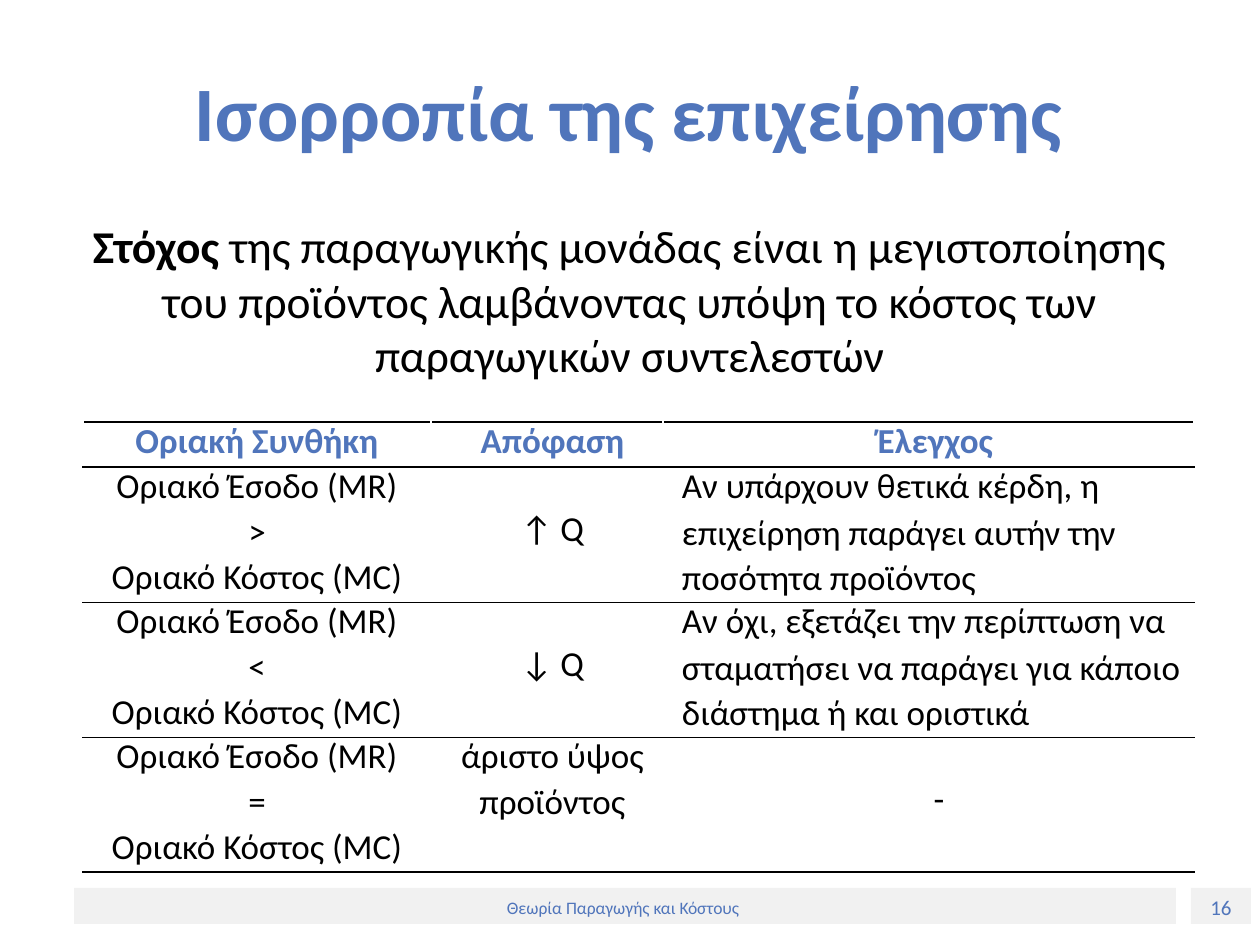
from lxml import etree
from pptx import Presentation
from pptx.dml.color import RGBColor
from pptx.enum.shapes import MSO_SHAPE
from pptx.enum.text import MSO_ANCHOR, PP_ALIGN
from pptx.oxml.ns import qn
from pptx.util import Emu, Pt

RECT = MSO_SHAPE.RECTANGLE
LEFT, CENTER = PP_ALIGN.LEFT, PP_ALIGN.CENTER
TOP, MIDDLE = MSO_ANCHOR.TOP, MSO_ANCHOR.MIDDLE
BLUE = RGBColor(0x50, 0x75, 0xBB)
BLACK = RGBColor(0x00, 0x00, 0x00)
GREY = RGBColor(0xF1, 0xF1, 0xF1)
FONT = "Calibri"
PX_PER_INCH = 126

HEADERS = [("Οριακή Συνθήκη", 0), ("Απόφαση", 11), ("Έλεγχος", 14)]
ROWS = [
    (">", ["↑ Q"], ["Αν υπάρχουν θετικά κέρδη, η",
                    "επιχείρηση παράγει αυτήν την ποσότητα προϊόντος"]),
    ("<", ["↓ Q"], ["Αν όχι, εξετάζει την περίπτωση να",
                    "σταματήσει να παράγει για κάποιο διάστημα ή και οριστικά"]),
    ("=", ["άριστο ύψος", "προϊόντος"], ["-"]),
]


def px(n):
    return Emu(round(n * 914400 / PX_PER_INCH))


def style(p, size, color, bold=False, align=LEFT):
    p.alignment = align
    for r in p.runs:
        r.font.name = FONT
        r.font.size = Pt(size)
        r.font.bold = bold
        r.font.color.rgb = color


def add_text(slide, box, text, size, color, bold=False, align=LEFT, left=0, top=0):
    tf = slide.shapes.add_textbox(*map(px, box)).text_frame
    tf.word_wrap = True
    tf.margin_left, tf.margin_top = px(left), px(top)
    tf.margin_right = tf.margin_bottom = 0
    tf.text = text
    p = tf.paragraphs[0]
    style(p, size, color, bold, align)
    return p


def add_bar(slide, box):
    sp = slide.shapes.add_shape(RECT, *map(px, box))
    sp.shadow.inherit = False
    sp.fill.solid()
    sp.fill.fore_color.rgb = GREY
    sp.line.fill.background()


def add_goal(slide, box):
    p = add_text(slide, box, "Στόχος ", 26, BLACK, align=CENTER, top=1)
    p.add_run().text = ("της παραγωγικής μονάδας είναι η μεγιστοποίησης του προϊόντος "
                        "λαμβάνοντας υπόψη το κόστος των παραγωγικών συντελεστών")
    style(p, 26, BLACK, align=CENTER)
    p.runs[0].font.bold = True
    p.space_before = Pt(1.1)


def add_footer(slide, box, text, number):
    """Grey footer bar, with the slide number in its own box at the right."""
    x, y, w, h = box
    num_w, gap = 60, 15
    bar_w = w - num_w - gap
    num_x = x + bar_w + gap
    add_bar(slide, (x, y, bar_w, h))
    add_bar(slide, (num_x, y, num_w, h))
    add_text(slide, (x, y + 9, bar_w - 4, 21), text, 10, BLUE, align=CENTER)
    add_text(slide, (num_x, y + 7, num_w, 25), number, 12, BLUE, align=CENTER)


def set_borders(cell, top, bottom):
    """Black rules above and below the cell, widths in points."""
    tc_pr = cell._tc.get_or_add_tcPr()
    for i, (tag, width) in enumerate((("a:lnT", top), ("a:lnB", bottom))):
        ln = etree.Element(qn(tag), w=str(Pt(width)))
        fill = etree.SubElement(ln, qn("a:solidFill"))
        etree.SubElement(fill, qn("a:srgbClr"), val=str(BLACK))
        tc_pr.insert(i, ln)


def fill_cell(cell, lines, color, bold=False, align=CENTER, left=0, anchor=TOP):
    cell.margin_left = px(left)
    cell.margin_right = cell.margin_top = 0
    cell.margin_bottom = px(8) if anchor == MIDDLE else 0
    cell.vertical_anchor = anchor
    cell.fill.background()
    tf = cell.text_frame
    tf.text = "\n".join(lines)
    for i, p in enumerate(tf.paragraphs):
        style(p, 20, color, bold, align)
        if i == 0:
            p.line_spacing = Pt(23.4)
        else:
            p.space_before = Pt(1.6)


def add_conditions(slide, box):
    x, y, w, h = box
    col_widths = (348, 232, w - 580)
    header_h = 45
    row_h = (h - header_h) // len(ROWS)
    table = slide.shapes.add_table(len(ROWS) + 1, 3, *map(px, box)).table
    table.first_row = table.horz_banding = False
    for col, width in zip(table.columns, col_widths):
        col.width = px(width)
    for i, row in enumerate(table.rows):
        row.height = px(row_h if i else header_h)

    for c, (text, left) in enumerate(HEADERS):
        fill_cell(table.cell(0, c), [text], BLUE, bold=True, left=left)
    for r, (sign, decision, check) in enumerate(ROWS, 1):
        condition = ["Οριακό Έσοδο (MR)", sign, "Οριακό Κόστος (MC)"]
        fill_cell(table.cell(r, 0), condition, BLACK)
        fill_cell(table.cell(r, 1), decision, BLACK, left=11,
                  anchor=MIDDLE if len(decision) == 1 else TOP)
        cell = table.cell(r, 2)
        if len(check) == 1:
            fill_cell(cell, check, BLACK, left=21, anchor=MIDDLE)
        else:
            fill_cell(cell, check, BLACK, align=LEFT, left=19)
            cell.text_frame.paragraphs[1].line_spacing = Pt(25.7)
            cell.text_frame.paragraphs[1].space_before = Pt(1.1)

    rules = [1, 1] + [0.5] * (len(ROWS) - 1) + [1]
    for r in range(len(ROWS) + 1):
        for c in range(3):
            set_borders(table.cell(r, c), rules[r], rules[r + 1])


def main():
    prs = Presentation()
    prs.slide_width, prs.slide_height = px(1260), px(945)
    slide = prs.slides.add_slide(prs.slide_layouts[6])
    add_footer(slide, (74, 888, 1177, 36), "Θεωρία Παραγωγής και Κόστους", "16")
    add_text(slide, (74, 26, 1111, 171), "Ισορροπία της επιχείρησης", 44, BLUE,
             bold=True, left=121, top=39)
    add_goal(slide, (92, 217, 1076, 168))
    add_conditions(slide, (83, 422, 1111, 450))
    prs.save("out.pptx")


if __name__ == "__main__":
    main()
